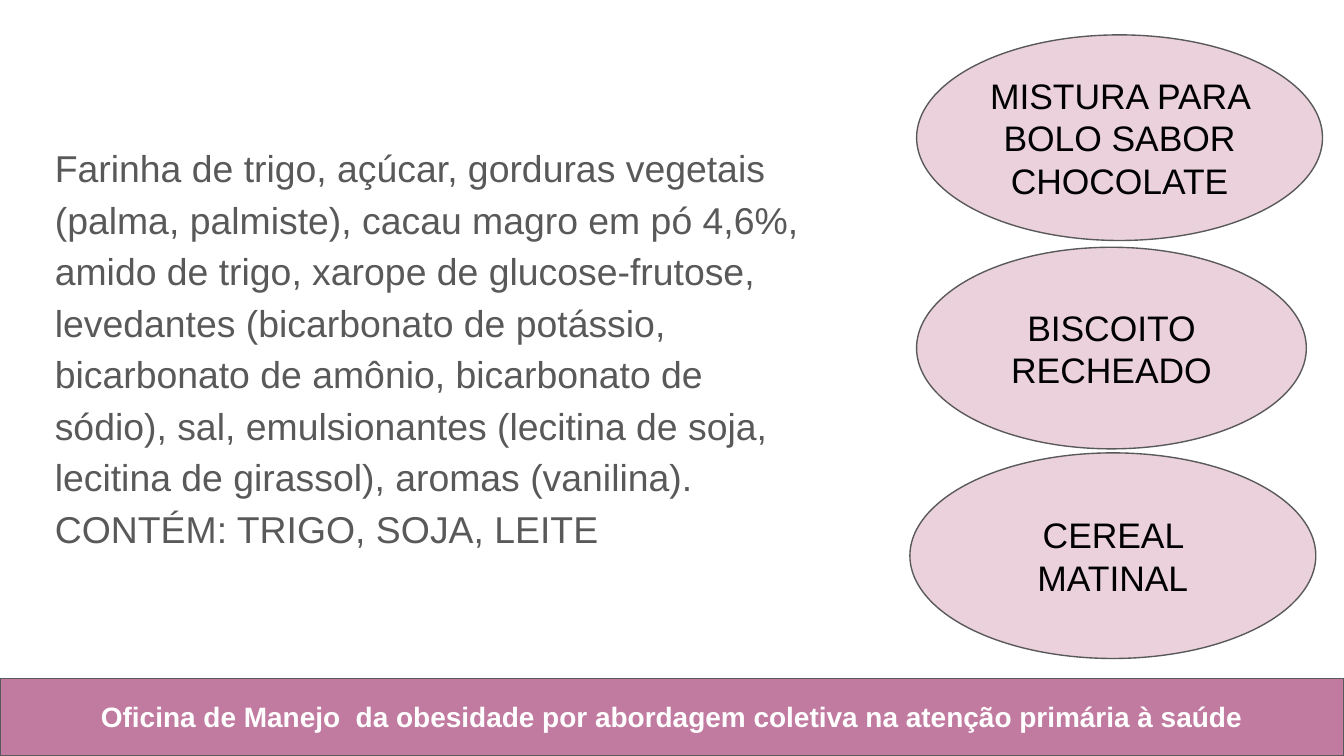
from dataclasses import dataclass
from pptx import Presentation, util as u
from pptx.dml.color import RGBColor
from pptx.enum import shapes, text


@dataclass(frozen=True)
class Theme:
    font: str = "Arial"
    band: str = "C27BA0"
    bubble: str = "EAD1DC"
    line: str = "595959"
    body: str = "595959"
    label: str = "000000"
    footer: str = "FFFFFF"
    body_size: int = 20
    label_size: int = 19
    footer_size: int = 15
    line_width: float = 0.75


T = Theme()
WIDTH = 10
HEIGHT = WIDTH * 9 / 16
BAND_TOP = 5.05
INGREDIENTS = (
    "Farinha de trigo, açúcar, gorduras vegetais (palma, palmiste), "
    "cacau magro em pó 4,6%, amido de trigo, xarope de glucose-frutose, "
    "levedantes (bicarbonato de potássio, bicarbonato de amônio, "
    "bicarbonato de sódio), sal, emulsionantes (lecitina de soja, "
    "lecitina de girassol), aromas (vanilina). CONTÉM: TRIGO, SOJA, LEITE"
)
FOOTER = "Oficina de Manejo  da obesidade por abordagem coletiva na atenção primária à saúde"
PRODUCTS = [
    ("CEREAL MATINAL", (6.77, 3.37, 3.02, 1.53)),
    ("MISTURA PARA BOLO SABOR CHOCOLATE", (6.82, 0.26, 3.02, 1.53)),
    ("BISCOITO RECHEADO", (6.82, 1.84, 2.9, 1.5)),
]


def apply(obj, values):
    for name, value in values.items():
        setattr(obj, name, value)


def inches(box):
    return [u.Inches(v) for v in box]


def inner(box, x, y):
    left, top, width, height = box
    return left + width * x, top + height * y, width * (1 - 2 * x), height * (1 - 2 * y)


def add_figure(parent, kind, box, fill):
    sp = parent.shapes.add_shape(kind, *inches(box))
    sp.shadow.inherit = False
    sp.fill.solid()
    sp.fill.fore_color.rgb = RGBColor.from_string(fill)
    sp.line.color.rgb = RGBColor.from_string(T.line)
    sp.line.width = u.Pt(T.line_width)


def add_text(parent, box, words, size, color, bold=False, frame=None, para=None):
    tf = parent.shapes.add_textbox(*inches(box)).text_frame
    margins = {f"margin_{side}": u.Inches(0.1) for side in ("left", "top", "right", "bottom")}
    apply(tf, {"word_wrap": True, **margins, **(frame or {})})
    p = tf.paragraphs[0]
    apply(p, para or {"alignment": text.PP_ALIGN.CENTER})
    r = p.add_run()
    r.text = words
    apply(r.font, {"name": T.font, "size": u.Pt(size), "bold": bold})
    r.font.color.rgb = RGBColor.from_string(color)


def add_footer(s):
    band = (0, BAND_TOP, WIDTH, HEIGHT - BAND_TOP)
    add_figure(s, shapes.MSO_SHAPE.RECTANGLE, band, T.band)
    add_text(s, inner(band, 0.03, 0.1), FOOTER, T.footer_size, T.footer, bold=True,
             frame={"auto_size": text.MSO_AUTO_SIZE.SHAPE_TO_FIT_TEXT})


def add_product(s, name, box):
    group = s.shapes.add_group_shape()
    add_figure(group, shapes.MSO_SHAPE.OVAL, box, T.bubble)
    add_text(group, inner(box, 0.1, 0.25), name, T.label_size, T.label,
             frame={"vertical_anchor": text.MSO_ANCHOR.MIDDLE})


def main():
    prs = Presentation()
    apply(prs, {"slide_width": u.Inches(WIDTH), "slide_height": u.Inches(HEIGHT)})
    s = prs.slides.add_slide(prs.slide_layouts[6])
    add_footer(s)
    add_text(s, (0.31, 0.93, 5.74, 3.31), INGREDIENTS, T.body_size, T.body,
             para={"alignment": text.PP_ALIGN.LEFT, "line_spacing": 1.15})
    for name, box in PRODUCTS:
        add_product(s, name, box)
    prs.save("out.pptx")


if __name__ == "__main__":
    main()
